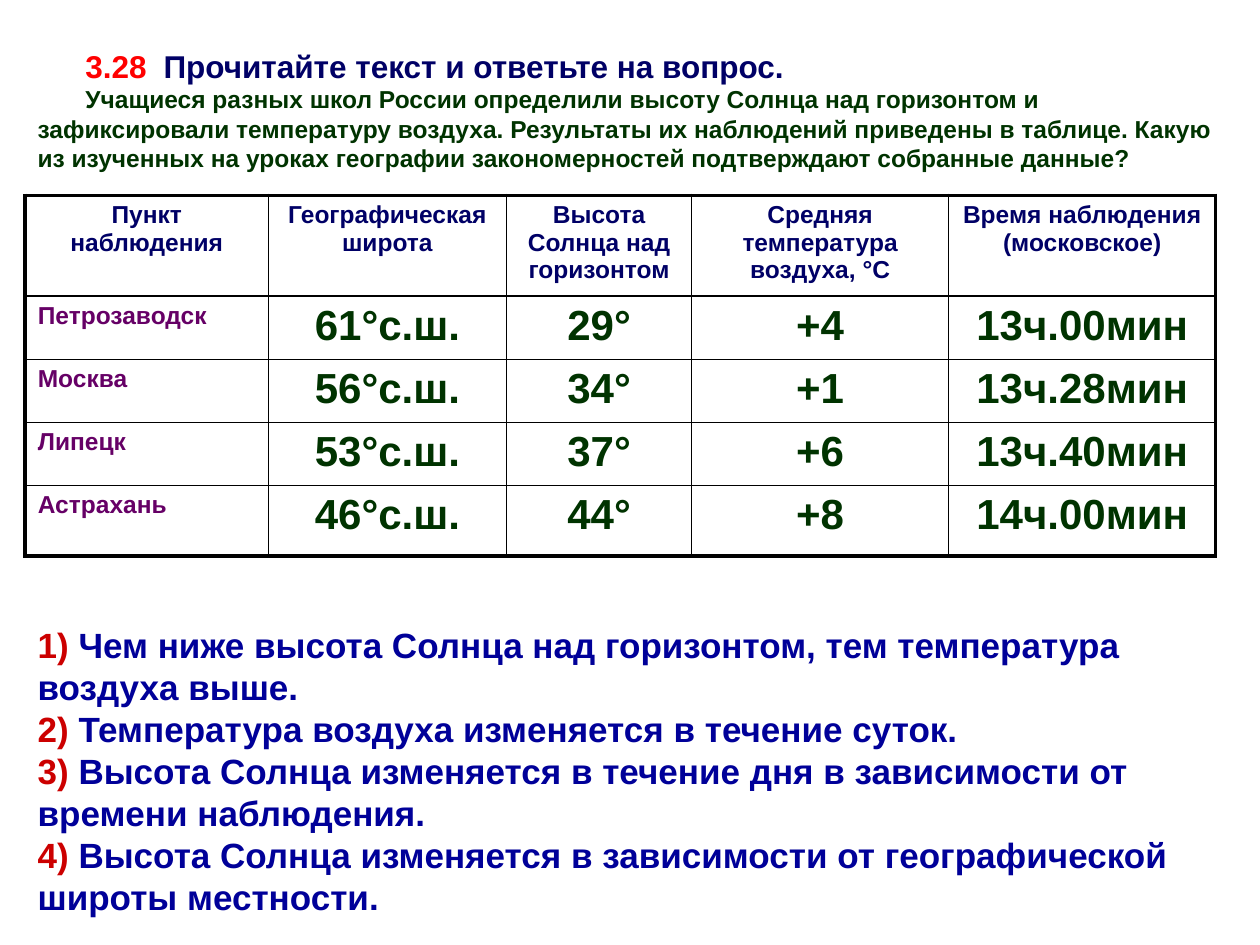
from dataclasses import dataclass

from lxml.etree import SubElement
from pptx import Presentation
from pptx.dml.color import RGBColor
from pptx.enum.text import MSO_ANCHOR, MSO_AUTO_SIZE, PP_ALIGN
from pptx.oxml.ns import qn
from pptx.util import Inches, Pt

RED = RGBColor(0xFF, 0x00, 0x00)
DARK_RED = RGBColor(0xCC, 0x00, 0x00)
NAVY = RGBColor(0x00, 0x00, 0x66)
BLUE = RGBColor(0x00, 0x00, 0x99)
GREEN = RGBColor(0x00, 0x33, 0x00)
PURPLE = RGBColor(0x66, 0x00, 0x66)
THIN, THICK = 1, 2.25


@dataclass(frozen=True)
class Observation:
    place: str
    latitude: str
    sun_height: str
    temperature: str
    time: str


HEADERS = [
    "Пункт наблюдения",
    "Географическая широта",
    "Высота Солнца над горизонтом",
    "Средняя температура воздуха, °С",
    "Время наблюдения (московское)",
]
OBSERVATIONS = [
    Observation("Петрозаводск", "61°с.ш.", "29°", "+4", "13ч.00мин"),
    Observation("Москва", "56°с.ш.", "34°", "+1", "13ч.28мин"),
    Observation("Липецк", "53°с.ш.", "37°", "+6", "13ч.40мин"),
    Observation("Астрахань", "46°с.ш.", "44°", "+8", "14ч.00мин"),
]
ANSWERS = [
    "Чем ниже высота Солнца над горизонтом, тем температура воздуха выше.",
    "Температура воздуха изменяется в течение суток.",
    "Высота Солнца изменяется в течение дня в зависимости от времени наблюдения.",
    "Высота Солнца изменяется в зависимости от географической широты местности.",
]
QUESTION = (
    "Учащиеся разных школ России определили высоту Солнца над горизонтом и "
    "зафиксировали температуру воздуха. Результаты их наблюдений приведены в таблице. "
    "Какую из изученных на уроках географии закономерностей подтверждают собранные данные?"
)
COLUMN_WIDTHS = [1.93, 1.89, 1.47, 2.04, 2.12]
ROW_HEIGHTS = [0.79, 0.48, 0.48, 0.48, 0.56]


def add_span(para, text: str, *, size: float, color: RGBColor) -> None:
    span = para.add_run()
    span.text = text
    span.font.name = "Arial"
    span.font.size = Pt(size)
    span.font.bold = True
    span.font.color.rgb = color


def add_text_frame(page, left: float, top: float, width: float, height: float):
    box = page.shapes.add_textbox(Inches(left), Inches(top), Inches(width), Inches(height))
    frame = box.text_frame
    frame.word_wrap = True
    frame.auto_size = MSO_AUTO_SIZE.SHAPE_TO_FIT_TEXT
    frame.vertical_anchor = MSO_ANCHOR.MIDDLE
    return frame


def indent_first_line(para, indent: float) -> None:
    properties = para._p.get_or_add_pPr()
    properties.set("marL", "0")
    properties.set("indent", str(Inches(indent)))


def add_tab_stop(para, position: float) -> None:
    stops = SubElement(para._p.get_or_add_pPr(), qn("a:tabLst"))
    SubElement(stops, qn("a:tab"), pos=str(Inches(position)), algn="l")


def add_question(page) -> None:
    frame = add_text_frame(page, 0.2, 0.32, 9.53, 1.1)
    title = frame.paragraphs[0]
    indent_first_line(title, 0.38)
    add_tab_stop(title, 1)
    add_span(title, "3.28\t", size=18, color=RED)
    add_span(title, "Прочитайте текст и ответьте на вопрос.", size=18, color=NAVY)
    para = frame.add_paragraph()
    indent_first_line(para, 0.38)
    add_span(para, QUESTION, size=14, color=GREEN)


def set_borders(cell, widths: dict[str, float]) -> None:
    properties = cell._tc.get_or_add_tcPr()
    for side, width in widths.items():
        line = SubElement(properties, qn(f"a:{side}"), w=str(Pt(width)))
        fill = SubElement(line, qn("a:solidFill"))
        SubElement(fill, qn("a:srgbClr"), val="000000")


def add_observations(page) -> None:
    rows = [HEADERS] + [
        [item.place, item.latitude, item.sun_height, item.temperature, item.time]
        for item in OBSERVATIONS
    ]
    last_row, last_column = len(rows) - 1, len(HEADERS) - 1
    table = page.shapes.add_table(
        len(rows), len(HEADERS), Inches(0.2), Inches(1.55),
        Inches(sum(COLUMN_WIDTHS)), Inches(sum(ROW_HEIGHTS)),
    ).table
    table.first_row = False
    table.horz_banding = False
    for column, width in zip(table.columns, COLUMN_WIDTHS):
        column.width = Inches(width)
    for row, height in zip(table.rows, ROW_HEIGHTS):
        row.height = Inches(height)
    for row_index, texts in enumerate(rows):
        for column_index, text in enumerate(texts):
            cell = table.cell(row_index, column_index)
            set_borders(cell, {
                "lnL": THICK if column_index == 0 else THIN,
                "lnR": THICK if column_index == last_column else THIN,
                "lnT": THICK if row_index == 0 else THIN,
                "lnB": THICK if row_index == last_row else THIN,
            })
            cell.fill.background()
            para = cell.text_frame.paragraphs[0]
            is_place = row_index > 0 and column_index == 0
            para.alignment = PP_ALIGN.LEFT if is_place else PP_ALIGN.CENTER
            if row_index == 0:
                add_span(para, text, size=14, color=NAVY)
            elif is_place:
                add_span(para, text, size=14, color=PURPLE)
            else:
                add_span(para, text, size=24, color=GREEN)


def add_answers(page) -> None:
    frame = add_text_frame(page, 0.2, 4.9, 9.61, 2.43)
    for number, answer in enumerate(ANSWERS, start=1):
        para = frame.paragraphs[0] if number == 1 else frame.add_paragraph()
        add_span(para, f"{number})", size=20, color=DARK_RED)
        add_span(para, f" {answer}", size=20, color=BLUE)


def main() -> None:
    deck = Presentation()
    deck.slide_width = Inches(10)
    deck.slide_height = Inches(7.5)
    page = deck.slides.add_slide(deck.slide_layouts[6])
    add_question(page)
    add_observations(page)
    add_answers(page)
    deck.save("out.pptx")


if __name__ == "__main__":
    main()
